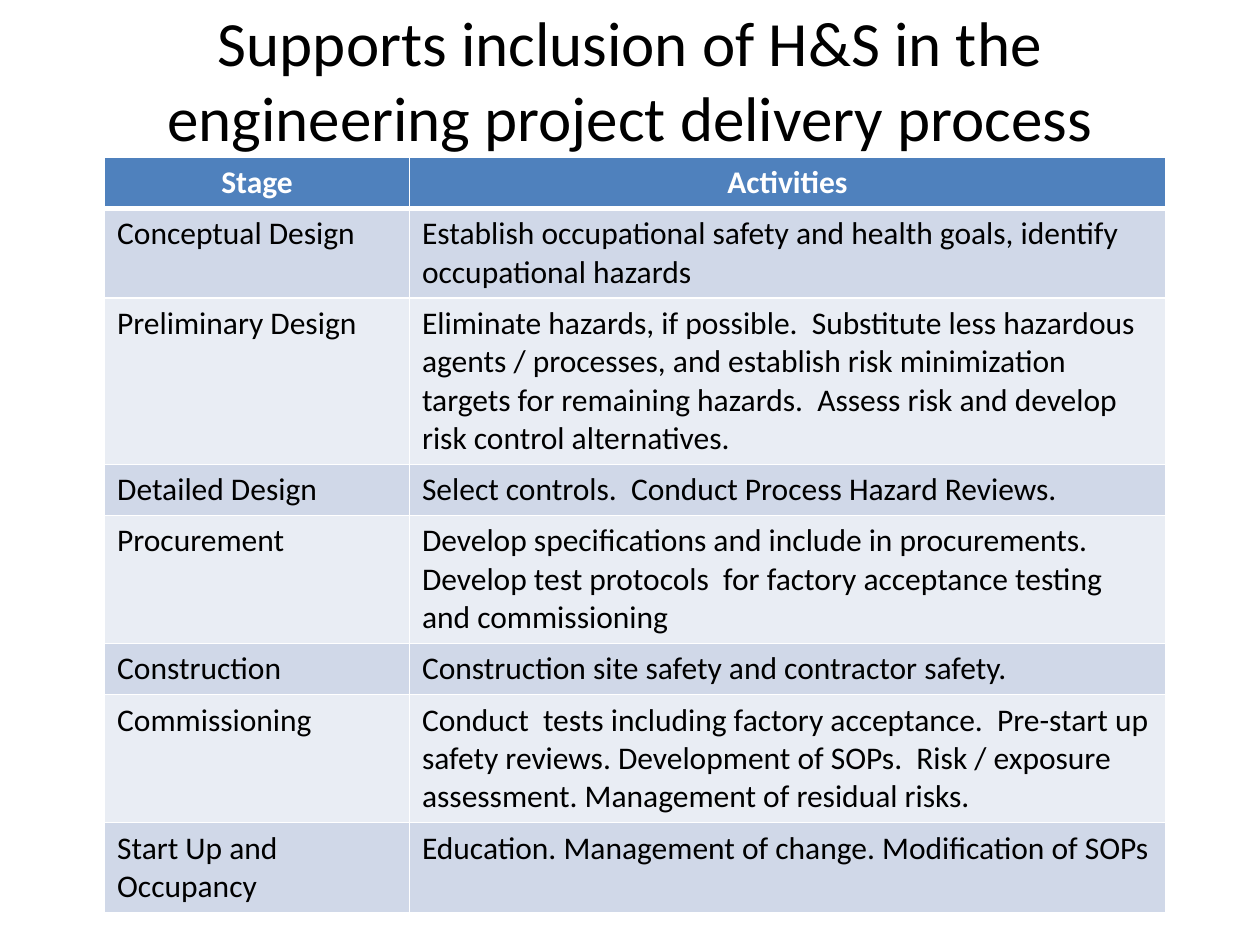
from lxml import etree
from pptx import Presentation
from pptx.dml.color import RGBColor
from pptx.enum.text import MSO_ANCHOR, MSO_AUTO_SIZE, PP_ALIGN
from pptx.oxml.ns import qn
from pptx.util import Inches, Pt

LEFT, CENTER = PP_ALIGN.LEFT, PP_ALIGN.CENTER
MIDDLE, NO_FIT = MSO_ANCHOR.MIDDLE, MSO_AUTO_SIZE.NONE
COLORS = {"head": "4F81BD", "odd": "D0D8E8", "even": "E9EDF4",
          "white": "FFFFFF", "black": "000000"}
LINE, PAD = 0.29, 0.1  # height of a text line and of a row's margins, inches

# stage, activities, lines of text in the row
ROWS = [
    ("Stage", "Activities", 1),
    ("Conceptual Design",
     "Establish occupational safety and health goals, identify occupational hazards", 2),
    ("Preliminary Design",
     "Eliminate hazards, if possible.  Substitute less hazardous agents / processes, "
     "and establish risk minimization targets for remaining hazards.  "
     "Assess risk and develop risk control alternatives.", 4),
    ("Detailed Design", "Select controls.  Conduct Process Hazard Reviews.", 1),
    ("Procurement",
     "Develop specifications and include in procurements. Develop test protocols  "
     "for factory acceptance testing and commissioning", 3),
    ("Construction", "Construction site safety and contractor safety.", 1),
    ("Commissioning",
     "Conduct  tests including factory acceptance.  Pre-start up safety reviews. "
     "Development of SOPs.  Risk / exposure assessment. "
     "Management of residual risks.", 3),
    ("Start Up and Occupancy",
     "Education. Management of change. Modification of SOPs", 2),
]


def write(frame, text, size=18, color="black", bold=False, align=LEFT):
    para = frame.paragraphs[0]
    para.alignment = align
    run = para.add_run()
    run.text = text
    run.font.name = "Calibri"
    run.font.size = Pt(size)
    run.font.bold = bold
    run.font.color.rgb = RGBColor.from_string(COLORS[color])


def edge(cell, side, width):
    """Draw one white cell border; call before the cell is filled."""
    props = cell._tc.get_or_add_tcPr()
    line = etree.SubElement(props, qn("a:ln" + side), w=str(Pt(width)))
    fill = etree.SubElement(line, qn("a:solidFill"))
    etree.SubElement(fill, qn("a:srgbClr"), val=COLORS["white"])


prs = Presentation()
prs.slide_width, prs.slide_height = Inches(10), Inches(7.5)
slide = prs.slides.add_slide(prs.slide_layouts[5])

title = slide.shapes.title
title.left, title.top = Inches(0.5), 0
title.width, title.height = Inches(9), Inches(1.25)
title.text_frame.auto_size = NO_FIT
title.text_frame.vertical_anchor = MIDDLE
write(title.text_frame,
      "Supports inclusion of H&S in the engineering project delivery process",
      size=36, align=CENTER)

high = sum(lines * LINE + PAD for *_, lines in ROWS)
table = slide.shapes.add_table(len(ROWS), 2, Inches(0.83), Inches(1.25),
                               Inches(8.42), Inches(high)).table
for col, width in zip(table.columns, (2.42, 6)):
    col.width = Inches(width)

for r, (*texts, lines) in enumerate(ROWS):
    table.rows[r].height = Inches(lines * LINE + PAD)
    head = r == 0
    shade = "head" if head else "odd" if r % 2 else "even"
    for c, text in enumerate(texts):
        cell = table.cell(r, c)
        for side in "LRTB":
            thick = (r, side) in ((0, "B"), (1, "T"))
            edge(cell, side, 3 if thick else 1)
        cell.fill.solid()
        cell.fill.fore_color.rgb = RGBColor.from_string(COLORS[shade])
        write(cell.text_frame, text, color="white" if head else "black",
              bold=head, align=CENTER if head else LEFT)

prs.save("out.pptx")
